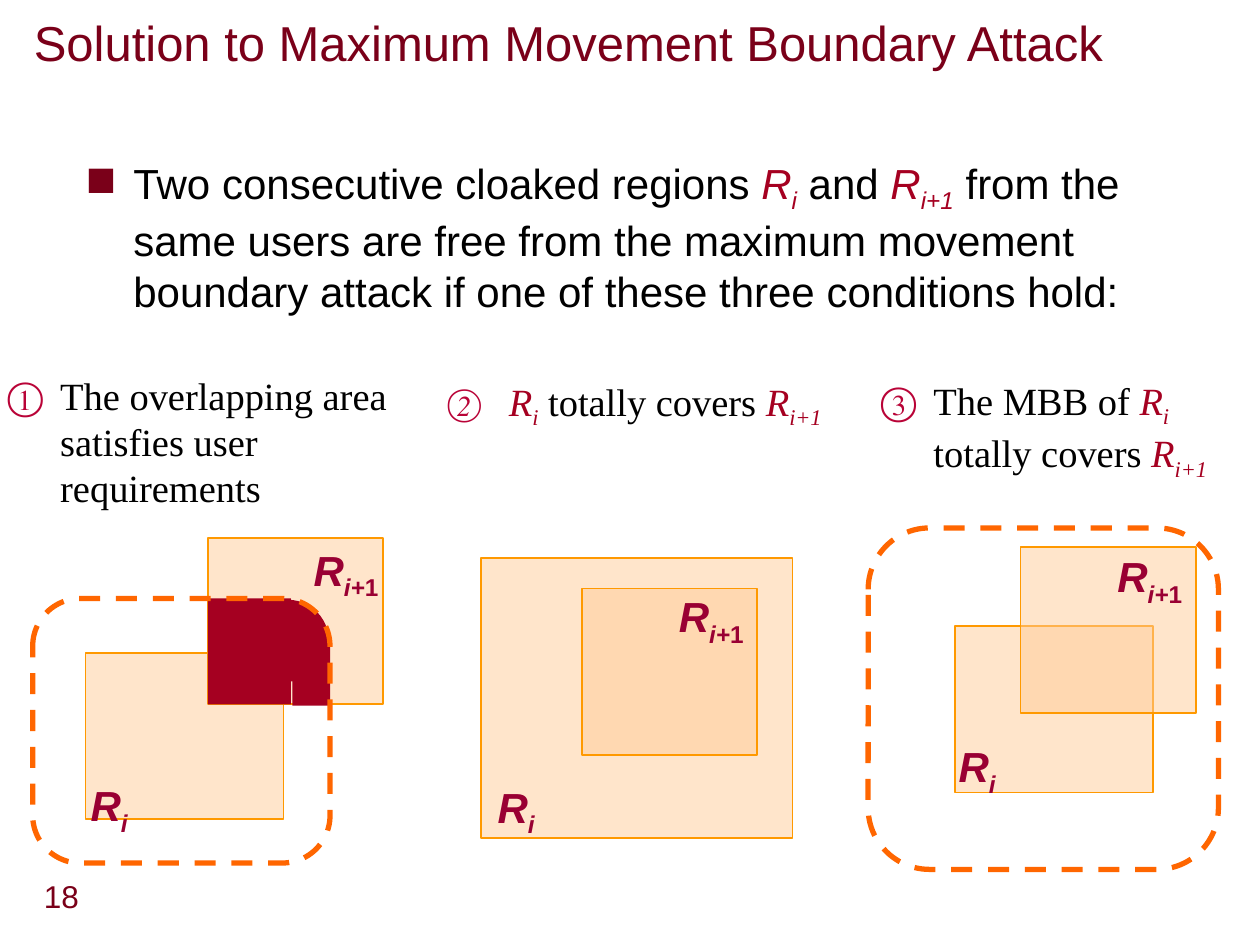
from lxml import etree
from pptx import Presentation
from pptx.dml.color import RGBColor
from pptx.enum.dml import MSO_LINE
from pptx.enum.shapes import MSO_SHAPE
from pptx.enum.text import MSO_ANCHOR, MSO_AUTO_SIZE
from pptx.oxml.ns import qn
from pptx.util import Inches, Pt

RECT, ROUND = MSO_SHAPE.RECTANGLE, MSO_SHAPE.ROUNDED_RECTANGLE
DASH = MSO_LINE.DASH
TOP, FIT = MSO_ANCHOR.TOP, MSO_AUTO_SIZE.SHAPE_TO_FIT_TEXT

MAROON = RGBColor(0x7A, 0x00, 0x19)
RED = RGBColor(0xA5, 0x00, 0x21)
CRIMSON = RGBColor(0xB9, 0x03, 0x37)
WINE = RGBColor(0x99, 0x00, 0x33)
BLACK = RGBColor(0x00, 0x00, 0x00)
PEACH = RGBColor(0xFF, 0xCC, 0x99)
AMBER = RGBColor(0xFF, 0x99, 0x00)
ORANGE = RGBColor(0xFF, 0x66, 0x00)

SANS, SERIF = "Arial", "Times New Roman"
CELL = 0.1  # inches: the slide is a grid of 100 columns by 75 rows
OLD_SIZE, NEW_SIZE = (15.7, 13.2), (13.9, 13.2)

# Runs are (text, colour, italic, subscript).
OLD = [("R", RED, True, False), ("i", RED, True, True)]
NEW = [("R", RED, True, False), ("i+1", RED, True, True)]
OLD_TAG = [("R", WINE, True, False), ("i", WINE, True, True)]
NEW_TAG = [("R", WINE, True, False), ("i+", WINE, True, True),
           ("1", WINE, False, True)]


def plain(text, color=BLACK):
    return [(text, color, False, False)]


def cells(*counts):
    return [Inches(n * CELL) for n in counts]


class Deck:
    def __init__(self):
        self.prs = Presentation()
        self.prs.slide_width, self.prs.slide_height = cells(100, 75)
        self.slide = self.prs.slides.add_slide(self.prs.slide_layouts[6])
        self.shapes = self.slide.shapes

    def group(self):
        """Send the next elements to a new group."""
        self.shapes = self.slide.shapes.add_group_shape().shapes

    def ungroup(self):
        self.shapes = self.slide.shapes

    def text(self, at, runs, size, font=SANS, bold=False, wrap=True):
        box = self.shapes.add_textbox(*cells(*at))
        frame = box.text_frame
        frame.word_wrap = wrap
        frame.vertical_anchor = TOP
        if not wrap:
            frame.auto_size = FIT
        para = frame.paragraphs[0]
        for words, color, italic, sub in runs:
            run = para.add_run()
            run.text = words
            run.font.name, run.font.size = font, Pt(size)
            run.font.bold, run.font.italic = bold, italic
            run.font.color.rgb = color
            if sub:
                run.font._element.set("baseline", "-25000")
        return frame

    def bullet(self, frame, color, left, hang, mark, **attrs):
        """Hang the first paragraph on a bullet; left and hang are in cells."""
        props = frame.paragraphs[0]._p.get_or_add_pPr()
        margin, indent = cells(left, -hang)
        props.set("marL", str(margin))
        props.set("indent", str(indent))
        tint = etree.SubElement(props, qn("a:buClr"))
        etree.SubElement(tint, qn("a:srgbClr"), val=str(color))
        etree.SubElement(props, qn(mark), **attrs)

    def shape(self, kind, at, fill=None, line=None, width=1):
        item = self.shapes.add_shape(kind, *cells(*at))
        item.shadow.inherit = False
        if fill is None:
            item.fill.background()
        else:
            item.fill.solid()
            item.fill.fore_color.rgb = fill
        if line is None:
            item.line.fill.background()
        else:
            item.line.color.rgb = line
            item.line.width = Pt(width)
        return item

    def region(self, x, y, size):
        item = self.shape(RECT, (x, y, *size), PEACH, AMBER)
        tint = item._element.spPr.find(qn("a:solidFill")).find(qn("a:srgbClr"))
        etree.SubElement(tint, qn("a:alpha"), val="50000")

    def bound(self, *at):
        item = self.shape(ROUND, at, line=ORANGE, width=3)
        item.adjustments[0] = 0.18
        item.line.dash_style = DASH

    def tags(self, old, new):
        """Label both regions at their (x, y) places."""
        self.text((*old, 5.1, 5), OLD_TAG, 24, bold=True, wrap=False)
        self.text((*new, 7.6, 5), NEW_TAG, 24, bold=True, wrap=False)

    def case(self, num, at, runs, left=9.2, hang=4.2):
        frame = self.text(at, runs, 22, SERIF)
        self.bullet(frame, CRIMSON, left, hang, "a:buAutoNum",
                    type="circleNumDbPlain", startAt=str(num))


def main():
    deck = Deck()
    deck.text((2.5, 69.1, 5.1, 4), plain("18", MAROON), 18, wrap=False)
    title = deck.text((1.7, 1, 94.2, 8.3), plain(
        "Solution to Maximum Movement Boundary Attack", MAROON), 28)
    title.margin_top = 0
    body = deck.text(
        (5.8, 12, 89.2, 13.5),
        plain("Two consecutive cloaked regions ") + OLD + plain(" and ") + NEW
        + plain(" from the same users are free from the maximum movement "
                "boundary attack if one of these three conditions hold:"), 24)
    deck.bullet(body, MAROON, 3.8, 3.8, "a:buChar", char="■")

    deck.group()
    deck.region(6.8, 51.8, OLD_SIZE)
    deck.region(16.5, 42.7, NEW_SIZE)
    deck.shape(RECT, (16.5, 47.5, 6.6, 8.4), RED)
    deck.shape(RECT, (23.2, 50.6, 3, 5.4), RED)
    corner = deck.shape(ROUND, (19.5, 47.6, 6.6, 6.5), RED)
    corner.adjustments[0] = 0.5
    deck.tags((6.2, 61.4), (23.9, 42.7))
    deck.bound(2.6, 47.5, 23.6, 21)
    deck.ungroup()
    deck.case(1, (-5.4, 29, 40.4, 9.3), plain(
        "The overlapping area satisfies user requirements"))

    deck.group()
    deck.region(38.2, 44.3, (24.7, 22.2))
    deck.region(46.2, 46.7, NEW_SIZE)
    deck.tags((38.5, 61.5), (52.9, 46.4))
    deck.ungroup()
    deck.case(2, (29.4, 29.5, 47.2, 9.3),
              OLD + plain(" totally covers ") + NEW, left=10, hang=5)

    deck.group()
    deck.region(75.8, 49.7, OLD_SIZE)
    deck.region(81, 43.4, NEW_SIZE)
    deck.tags((75.1, 58.3), (87.7, 43.2))
    deck.bound(68.9, 41.9, 27.8, 27.1)
    deck.ungroup()
    deck.case(3, (63.9, 29.4, 37.8, 9.3), plain("The MBB of ") + OLD
              + plain(" totally covers ") + NEW)
    deck.prs.save("out.pptx")


if __name__ == "__main__":
    main()
